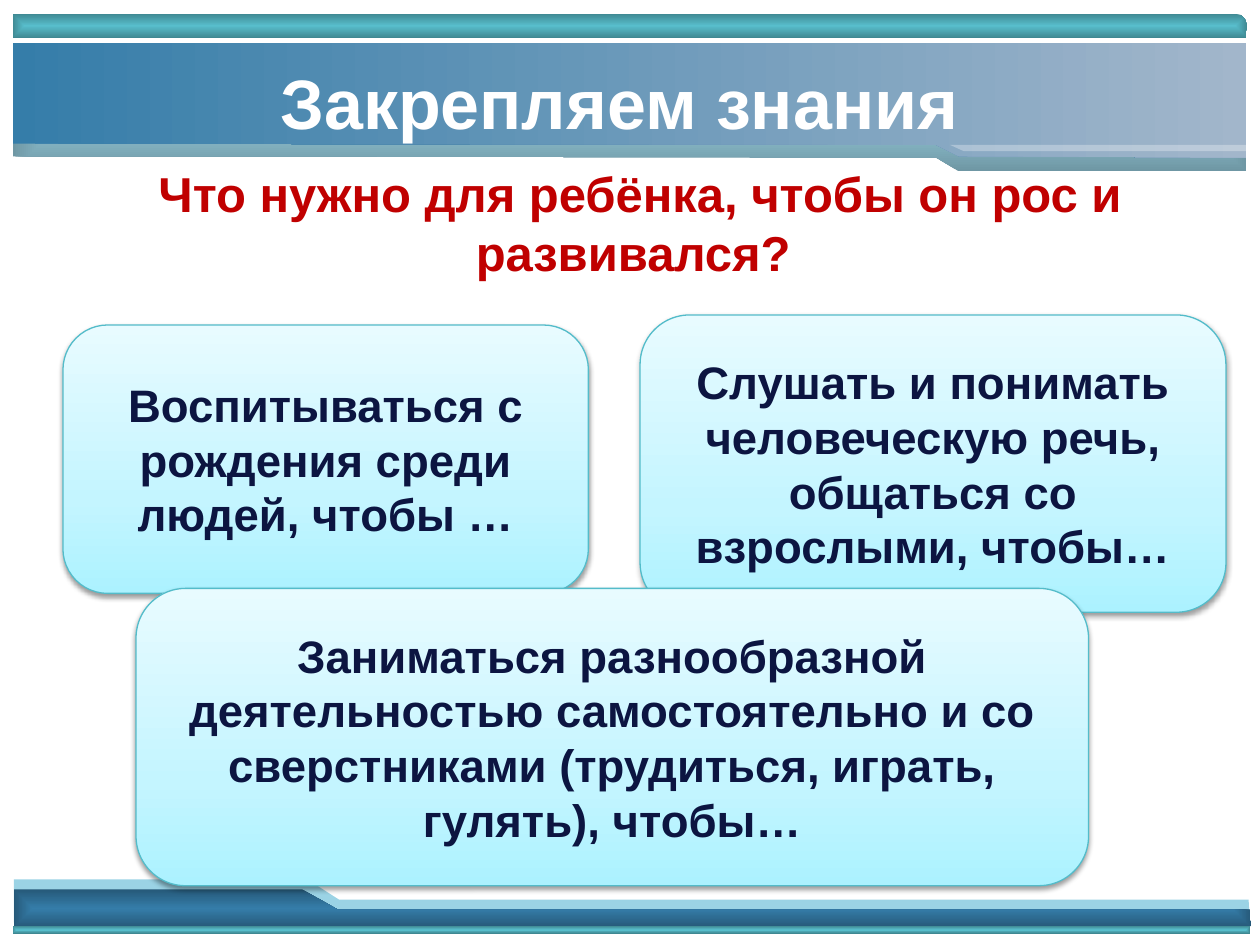
from lxml.etree import SubElement
from pptx import Presentation
from pptx.dml.color import RGBColor
from pptx.enum.shapes import MSO_SHAPE
from pptx.enum.text import MSO_ANCHOR, MSO_AUTO_SIZE, PP_ALIGN
from pptx.oxml import parse_xml
from pptx.oxml.ns import nsdecls, qn
from pptx.util import Pt

PX = 9144
TEAL = [(0, "58BECC"), (100, "3F8892")]
BLUE = [(0, "357DA9"), (100, "265979")]
ICE = [(0, "9BD3E5"), (100, "6F97A4")]
TITLE_BLUE = [(0, "357DA9"), (100, "A2B6CB")]
CARD_BLUE = [(0, "ACF2FF"), (35, "C4F5FF"), (100, "E8FBFF")]
CENTRE = '<a:path path="{}"><a:fillToRect l="50000" t="50000" r="50000" b="50000"/></a:path>'
CARDS = [
    ((50, 258, 417, 213), "Воспитываться с рождения среди людей, чтобы …"),
    ((508, 250, 465, 236), "Слушать и понимать человеческую речь, общаться со взрослыми, чтобы…"),
    ((108, 467, 756, 236), "Заниматься разнообразной деятельностью самостоятельно "
                           "и со сверстниками (трудиться, играть, гулять), чтобы…"),
]


def color(code):
    """Turn a hex string into a colour."""
    return RGBColor.from_string(code)


def scaled(box):
    """Turn a box in px into EMU."""
    return [length * PX for length in box]


def fill_solid(shape, code, opacity=100):
    """Fill a shape with one colour at the given opacity percentage."""
    shape.fill.solid()
    shape.fill.fore_color.rgb = color(code)
    if opacity < 100:
        tint = shape.fill._xPr.find(".//" + qn("a:srgbClr"))
        SubElement(tint, qn("a:alpha"), val=str(opacity * 1000))


def fill_gradient(shape, stops, angle=None, path="rect"):
    """Fill a shape with a linear gradient, or one from its centre if no angle is given."""
    marks = "".join(f'<a:gs pos="{place * 1000}"><a:srgbClr val="{code}"/></a:gs>'
                    for place, code in stops)
    course = (CENTRE.format(path) if angle is None
              else f'<a:lin ang="{angle * 60000}" scaled="0"/>')
    shape.fill.background()
    properties = shape._element.spPr
    properties.replace(
        properties.find(qn("a:noFill")),
        parse_xml(f'<a:gradFill {nsdecls("a")} rotWithShape="1"><a:gsLst>{marks}</a:gsLst>{course}</a:gradFill>'))


def add_outline(page, box, points):
    """Draw a closed outline whose points are relative to the box."""
    left, top = box[:2]
    corners = [(left + x, top + y) for x, y in points]
    builder = page.shapes.build_freeform(*corners[0], scale=PX)
    builder.add_line_segments(corners[1:], close=True)
    shape = builder.convert_to_shape()
    shape.line.fill.background()
    shape.shadow.inherit = False
    return shape


def write(shape, text, size, code):
    """Write one centred bold paragraph."""
    frame = shape.text_frame
    frame.word_wrap = True
    frame.text = text
    para = frame.paragraphs[0]
    para.alignment = PP_ALIGN.CENTER
    for span in para.runs:
        span.font.name = "Arial"
        span.font.size = Pt(size)
        span.font.bold = True
        span.font.color.rgb = color(code)


def add_footer(page, box):
    """Draw the stepped bands and the thin bar at the bottom."""
    left, top, width, height = box
    pale = add_outline(page, box, [(0, 34), (981, 34), (980, 16), (258, 16), (233, 0), (0, 0)])
    fill_solid(pale, "9BD3E5")
    dark = add_outline(page, (left, top + 8),
                       [(0, 30), (982, 29), (981, 16), (257, 16), (229, 0), (0, 0)])
    fill_gradient(dark, BLUE)
    bar = page.shapes.add_shape(MSO_SHAPE.RECTANGLE,
                                *scaled((left - 1, top + height - 6, width, 6)))
    bar.line.fill.background()
    bar.shadow.inherit = False
    fill_gradient(bar, TEAL, path="shape")


def add_header(page, box):
    """Draw the top bar, the stepped title band and its highlight."""
    left, top, width, height = box
    bar = add_outline(page, box, [(0, 0), (970, 0), (975, 1), (978, 4), (980, 8), (979, 19), (0, 19)])
    fill_gradient(bar, TEAL)
    bands = [((90, 91, 102, 102), ICE, None), ((80, 81, 90, 91), TITLE_BLUE, 0)]
    for (start, step, drop, end), stops, angle in bands:
        band = add_outline(page, (left, top + 23),
                           [(979, 0), (0, 0), (0, start), (733, step), (751, drop), (979, end)])
        fill_gradient(band, stops, angle)
    shine = add_outline(page, (left + 744, top + 104), [(0, 0), (236, 0), (236, 5), (11, 5)])
    fill_solid(shine, "FFFFFF", 30)


def add_title(page, box, text):
    """Place the title above the header bands."""
    title = page.shapes.title
    title.left, title.top, title.width, title.height = scaled(box)
    title.text_frame.vertical_anchor = MSO_ANCHOR.MIDDLE
    title.text_frame.auto_size = MSO_AUTO_SIZE.NONE
    write(title, text, 40, "FFFFFF")
    page.shapes._spTree.append(title._element)


def add_card(page, box, text):
    """Add a rounded answer card with a soft shadow."""
    card = page.shapes.add_shape(MSO_SHAPE.ROUNDED_RECTANGLE, *scaled(box))
    fill_gradient(card, CARD_BLUE, 270)
    card.line.color.rgb = color("53BCCA")
    card.line.width = Pt(0.75)
    card.shadow.inherit = False
    effects = card._element.spPr.find(qn("a:effectLst"))
    shadow = SubElement(effects, qn("a:outerShdw"), blurRad=str(Pt(3.1)), dist=str(Pt(1.6)),
                        dir="5400000", rotWithShape="0")
    shade = SubElement(shadow, qn("a:srgbClr"), val="000000")
    SubElement(shade, qn("a:alpha"), val="38000")
    card.text_frame.vertical_anchor = MSO_ANCHOR.MIDDLE
    write(card, text, 26, "0C1541")


def add_question(page, box, text):
    """Add the question under the header."""
    question = page.shapes.add_textbox(*scaled(box))
    write(question, text, 28, "C00000")
    question.text_frame.auto_size = MSO_AUTO_SIZE.SHAPE_TO_FIT_TEXT


def main():
    """Build the deck and save it."""
    deck = Presentation()
    deck.slide_width, deck.slide_height = scaled((1000, 750))
    page = deck.slides.add_slide(deck.slide_layouts[5])
    add_footer(page, (11, 698, 982, 43))
    add_header(page, (10, 11, 980, 125))
    add_title(page, (25, 36, 933, 89), "Закрепляем знания")
    for box, text in CARDS:
        add_card(page, box, text)
    add_question(page, (83, 125, 850, 104), "Что нужно для ребёнка, чтобы он рос и развивался? ")
    deck.save("out.pptx")


if __name__ == "__main__":
    main()
